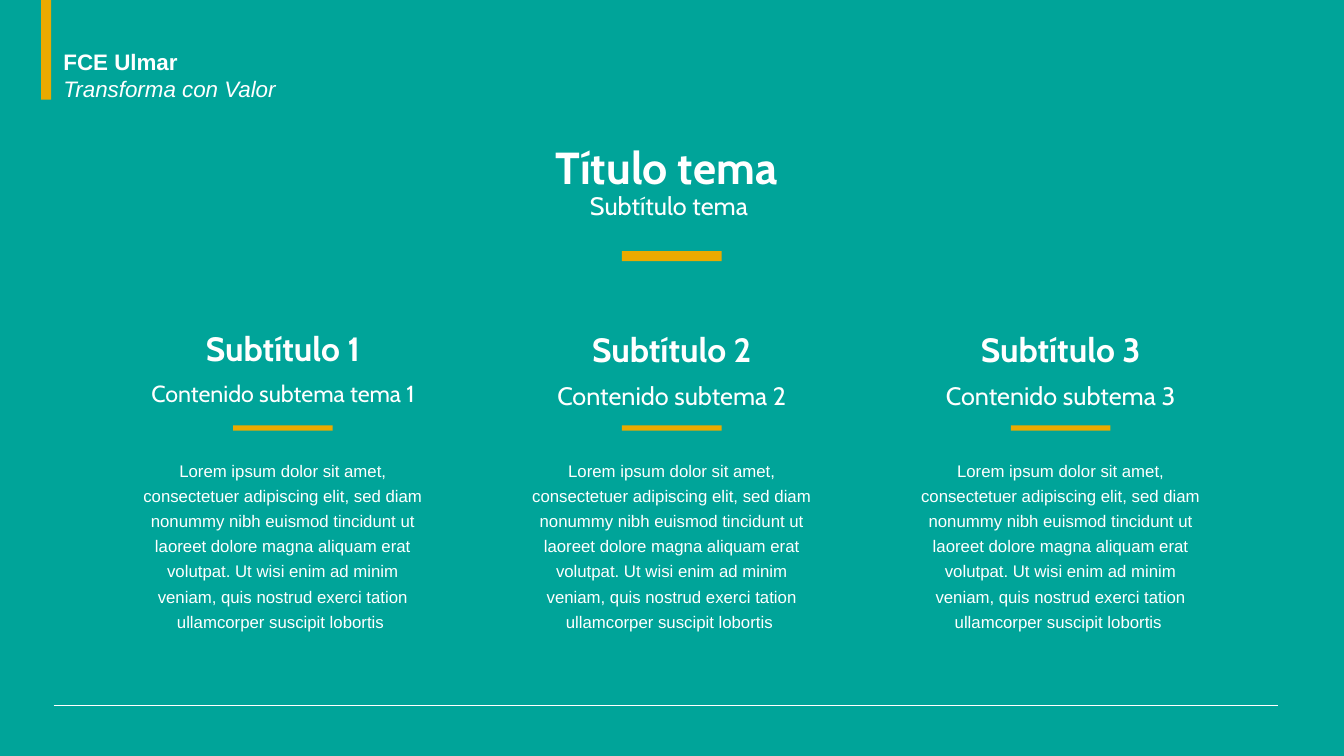
from dataclasses import dataclass

from lxml import etree
from pptx import Presentation
from pptx.dml.color import RGBColor
from pptx.enum.shapes import MSO_CONNECTOR, MSO_SHAPE
from pptx.enum.text import MSO_ANCHOR, MSO_AUTO_SIZE, PP_ALIGN
from pptx.oxml.ns import qn
from pptx.util import Cm, Pt

LEFT, CENTER = PP_ALIGN.LEFT, PP_ALIGN.CENTER
TOP, MIDDLE = MSO_ANCHOR.TOP, MSO_ANCHOR.MIDDLE
FIXED, GROW = MSO_AUTO_SIZE.NONE, MSO_AUTO_SIZE.SHAPE_TO_FIT_TEXT
RECT, STRAIGHT = MSO_SHAPE.RECTANGLE, MSO_CONNECTOR.STRAIGHT


@dataclass(frozen=True)
class Theme:
    back: RGBColor = RGBColor(0x00, 0xA4, 0x99)
    gold: RGBColor = RGBColor(0xEA, 0xAA, 0x00)
    white: RGBColor = RGBColor(0xFF, 0xFF, 0xFF)
    head: str = "Cabin"
    body: str = "Arial"
    title: float = 32
    topic: float = 24
    sub: float = 18
    tight: float = 16.6
    brand: float = 16
    text: float = 12


THEME = Theme()

# Layout in centimetres
MID = 16.93
STEP = 9.8
ROW = 0.89
BAR_LONG, BAR_WIDE, BAR_THIN = 2.51, 0.25, 0.13

LOREM = (
    "Lorem ipsum dolor sit amet, consectetuer adipiscing elit, sed diam "
    "nonummy nibh euismod tincidunt ut laoreet dolore magna aliquam erat "
    "volutpat. Ut wisi enim ad minim veniam, quis nostrud exerci tation "
    "ullamcorper suscipit lobortis "
)

# Heading, content line, its type size, top of the heading
TOPICS = [
    ("Subtítulo 1", "Contenido subtema tema 1", THEME.tight, 8.33),
    ("Subtítulo 2", "Contenido subtema 2", THEME.sub, 8.36),
    ("Subtítulo 3", "Contenido subtema 3", THEME.sub, 8.36),
]


def add_box(slide, x, y, w, h, anchor=TOP, fit=FIXED, wrap=True):
    frame = slide.shapes.add_textbox(Cm(x), Cm(y), Cm(w), Cm(h)).text_frame
    frame.word_wrap = wrap
    frame.auto_size = fit
    frame.vertical_anchor = anchor
    return frame


def set_text(para, text, size, face, align=CENTER, bold=False, italic=False):
    para.text = text
    para.alignment = align
    font = para.font
    font.name, font.size = face, Pt(size)
    font.bold, font.italic = bold, italic
    font.color.rgb = THEME.white


def add_head(slide, mid, y, w, text, size):
    frame = add_box(slide, mid - w / 2, y, w, ROW, MIDDLE)
    set_text(frame.paragraphs[0], text, size, THEME.head, bold=True)


def add_sub(slide, mid, y, w, text, size):
    para = add_box(slide, mid - w / 2, y, w, ROW).paragraphs[0]
    set_text(para, text, size, THEME.head)
    para.line_spacing = 0.8
    para.space_before = Pt(10)


def add_body(slide, mid, y, w, h, text):
    para = add_box(slide, mid - w / 2, y, w, h, fit=GROW).paragraphs[0]
    set_text(para, text, THEME.text, THEME.body)
    para.line_spacing = Pt(18)


def add_bar(slide, x, y, w, h):
    bar = slide.shapes.add_shape(RECT, Cm(x), Cm(y), Cm(w), Cm(h))
    bar.shadow.inherit = False
    bar.fill.solid()
    bar.fill.fore_color.rgb = THEME.gold
    bar.line.fill.background()


def add_rule(slide, x, y, end):
    rule = slide.shapes.add_connector(STRAIGHT, Cm(x), Cm(y), Cm(end), Cm(y))
    rule.line.color.rgb = THEME.white
    rule.line.width = Pt(0.5)
    etree.SubElement(rule._element.spPr, qn("a:effectLst"))


def add_brand(slide):
    add_bar(slide, 1.04, 0, BAR_WIDE, BAR_LONG)
    frame = add_box(slide, 1.35, 1.09, 5.92, 1.63, fit=GROW, wrap=False)
    set_text(frame.paragraphs[0], "FCE Ulmar", THEME.brand, THEME.body,
             LEFT, bold=True)
    set_text(frame.add_paragraph(), "Transforma con Valor", THEME.brand,
             THEME.body, LEFT, italic=True)


def add_topic(slide, mid, head, sub, size, y):
    add_head(slide, mid, y, 6.55, head, THEME.topic)
    add_sub(slide, mid, y + 1.24, 8.5, sub, size)
    add_bar(slide, mid - BAR_LONG / 2, 10.72, BAR_LONG, BAR_THIN)
    add_body(slide, mid, 11.35, 7.7, 4.67, LOREM)


def main():
    deck = Presentation()
    deck.slide_width, deck.slide_height = Cm(33.87), Cm(19.05)
    slide = deck.slides.add_slide(deck.slide_layouts[6])
    fill = slide.background.fill
    fill.solid()
    fill.fore_color.rgb = THEME.back

    # Header
    add_brand(slide)
    add_head(slide, MID, 3.76, 9.55, "Título tema ", THEME.title)
    add_sub(slide, MID, 4.83, 9.55, "Subtítulo tema ", THEME.sub)
    add_bar(slide, MID - BAR_LONG / 2, 6.33, BAR_LONG, BAR_WIDE)

    # Three columns around the middle
    for i, topic in enumerate(TOPICS):
        add_topic(slide, MID + (i - 1) * STEP, *topic)

    # Footer
    add_rule(slide, 1.35, 17.78, 32.21)
    deck.save("out.pptx")


if __name__ == "__main__":
    main()
